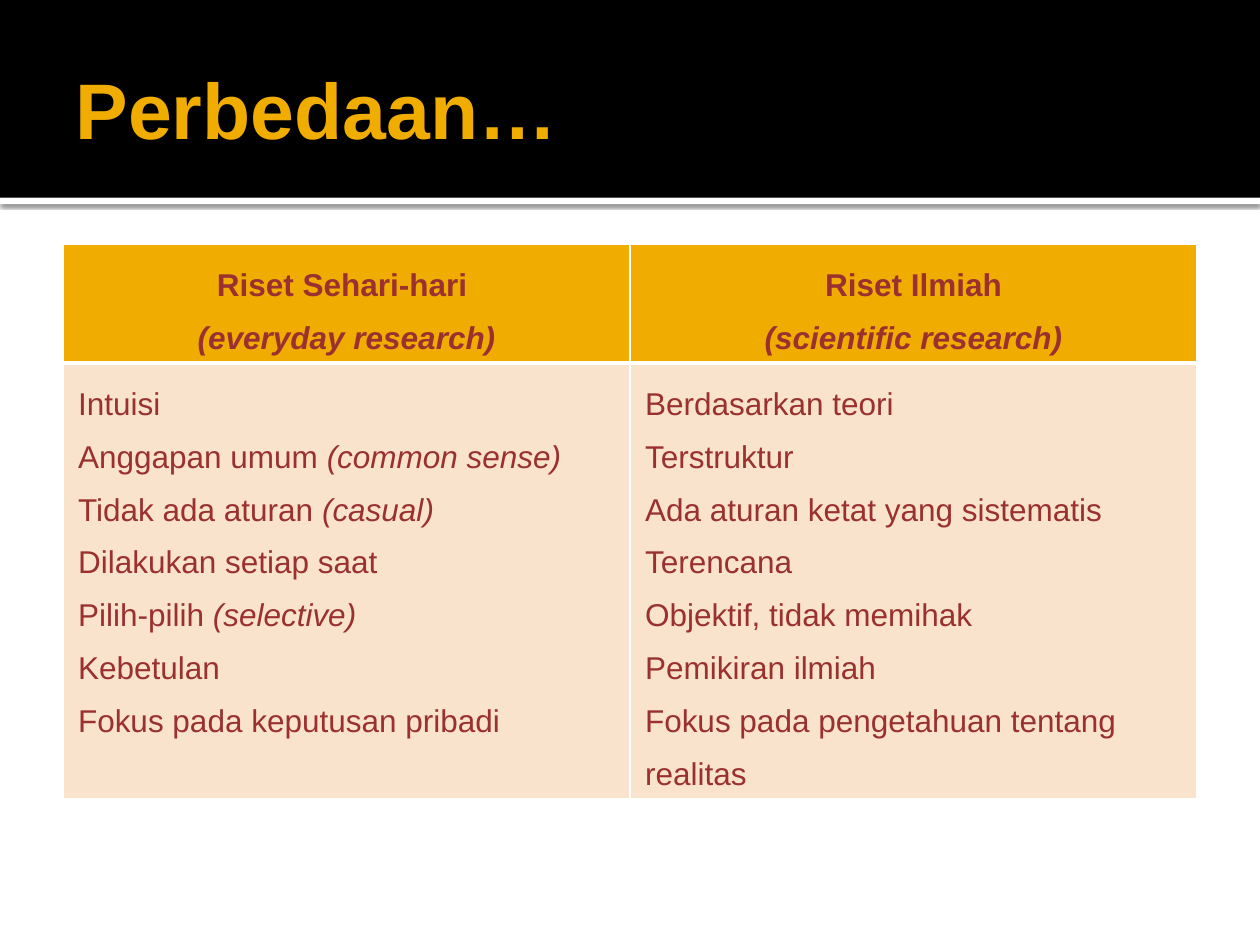
from lxml.etree import SubElement
from pptx import Presentation
from pptx.dml.color import RGBColor
from pptx.enum.shapes import MSO_SHAPE as Shape
from pptx.enum.text import MSO_ANCHOR as Anchor, PP_ALIGN as Align
from pptx.oxml import parse_xml
from pptx.oxml.ns import nsdecls, qn
from pptx.util import Inches, Pt

GOLD = RGBColor(0xF0, 0xAD, 0x00)
RED = RGBColor(0x9A, 0x31, 0x30)
CREAM = RGBColor(0xF9, 0xE3, 0xCC)
BLACK = RGBColor(0, 0, 0)
WHITE = RGBColor(255, 255, 255)
FONT = "Arial"
TITLE = "Perbedaan…"
HEADS = [
    [("Riset Sehari-hari ", ""), ("", "(everyday research)")],
    [("Riset Ilmiah", ""), ("", "(scientific research)")],
]
LISTS = [
    [
        ("Intuisi", ""),
        ("Anggapan umum ", "(common sense)"),
        ("Tidak ada aturan ", "(casual)"),
        ("Dilakukan setiap saat", ""),
        ("Pilih-pilih ", "(selective)"),
        ("Kebetulan", ""),
        ("Fokus pada keputusan pribadi", ""),
    ],
    [
        ("Berdasarkan teori", ""),
        ("Terstruktur", ""),
        ("Ada aturan ketat yang sistematis", ""),
        ("Terencana", ""),
        ("Objektif, tidak memihak", ""),
        ("Pemikiran ilmiah", ""),
        ("Fokus pada pengetahuan tentang realitas", ""),
    ],
]
ROWS = [
    (HEADS, GOLD, True, Align.CENTER, {"L": 1, "R": 1, "T": 1, "B": 3}),
    (LISTS, CREAM, False, Align.LEFT, {"L": 1, "R": 1, "T": 3, "B": 1}),
]
WIDE, BAND, STRIP, EDGE = 10, 1.57, 0.05, 0.5
ROW = 0.41


def add_bar(slide, top, high, fill):
    bar = slide.shapes.add_shape(
        Shape.RECTANGLE, 0, Inches(top), Inches(WIDE), Inches(high))
    bar.shadow.inherit = False
    bar.fill.solid()
    bar.fill.fore_color.rgb = fill
    bar.line.fill.background()
    return bar


def add_shade(bar):
    shade = parse_xml(
        f'<a:outerShdw {nsdecls("a")} blurRad="{Pt(2.5)}" dist="{Pt(0.8)}" '
        'dir="5400000" rotWithShape="0"><a:srgbClr val="000000">'
        '<a:alpha val="60000"/></a:srgbClr></a:outerShdw>')
    bar._element.spPr.find(qn("a:effectLst")).append(shade)


def set_title(slide):
    title = slide.shapes.title
    title.left, title.top = Inches(EDGE), Inches(0.17)
    title.width, title.height = Inches(WIDE - 2 * EDGE), Inches(1.37)
    frame = title.text_frame
    frame.text = TITLE
    frame.vertical_anchor = Anchor.MIDDLE
    frame.margin_left, frame.margin_right = Inches(0.1), Inches(0.05)
    frame.margin_top = frame.margin_bottom = Inches(0.05)
    para = frame.paragraphs[0]
    para.alignment = Align.LEFT
    font = para.font
    font.name, font.size, font.bold = FONT, Pt(45), True
    font.color.rgb = GOLD
    slide.shapes._spTree.append(title._element)


def set_edges(cell, edges):
    props = cell._tc.get_or_add_tcPr()
    for side, width in edges.items():
        line = SubElement(props, qn(f"a:ln{side}"), w=str(Pt(width)))
        fill = SubElement(line, qn("a:solidFill"))
        SubElement(fill, qn("a:srgbClr"), val=str(WHITE))


def fill_cell(cell, lines, fill, bold, align, edges):
    set_edges(cell, edges)
    cell.fill.solid()
    cell.fill.fore_color.rgb = fill
    cell.margin_left = cell.margin_right = Inches(0.12)
    cell.margin_top = cell.margin_bottom = Inches(0.05)
    frame = cell.text_frame
    for at, (plain, slant) in enumerate(lines):
        para = frame.add_paragraph() if at else frame.paragraphs[0]
        para.alignment, para.line_spacing = align, 1.5
        font = para.font
        font.name, font.size, font.bold = FONT, Pt(18), bold
        font.color.rgb = RED
        for text, tilt in ((plain, False), (slant, True)):
            if text:
                run = para.add_run()
                run.text, run.font.italic = text, tilt


def add_grid(slide):
    table = slide.shapes.add_table(
        len(ROWS), len(HEADS), Inches(EDGE), Inches(1.94),
        Inches(WIDE - 2 * EDGE), Inches(ROW * len(ROWS))).table
    for row, (cells, *style) in enumerate(ROWS):
        for col, lines in enumerate(cells):
            fill_cell(table.cell(row, col), lines, *style)


def main():
    """Build the slide comparing everyday and scientific research."""
    deck = Presentation()
    deck.slide_width, deck.slide_height = Inches(WIDE), Inches(7.5)
    slide = deck.slides.add_slide(deck.slide_layouts[5])
    add_shade(add_bar(slide, BAND, STRIP, WHITE))
    add_bar(slide, 0, BAND, BLACK)
    set_title(slide)
    add_grid(slide)
    deck.save("out.pptx")


if __name__ == "__main__":
    main()
